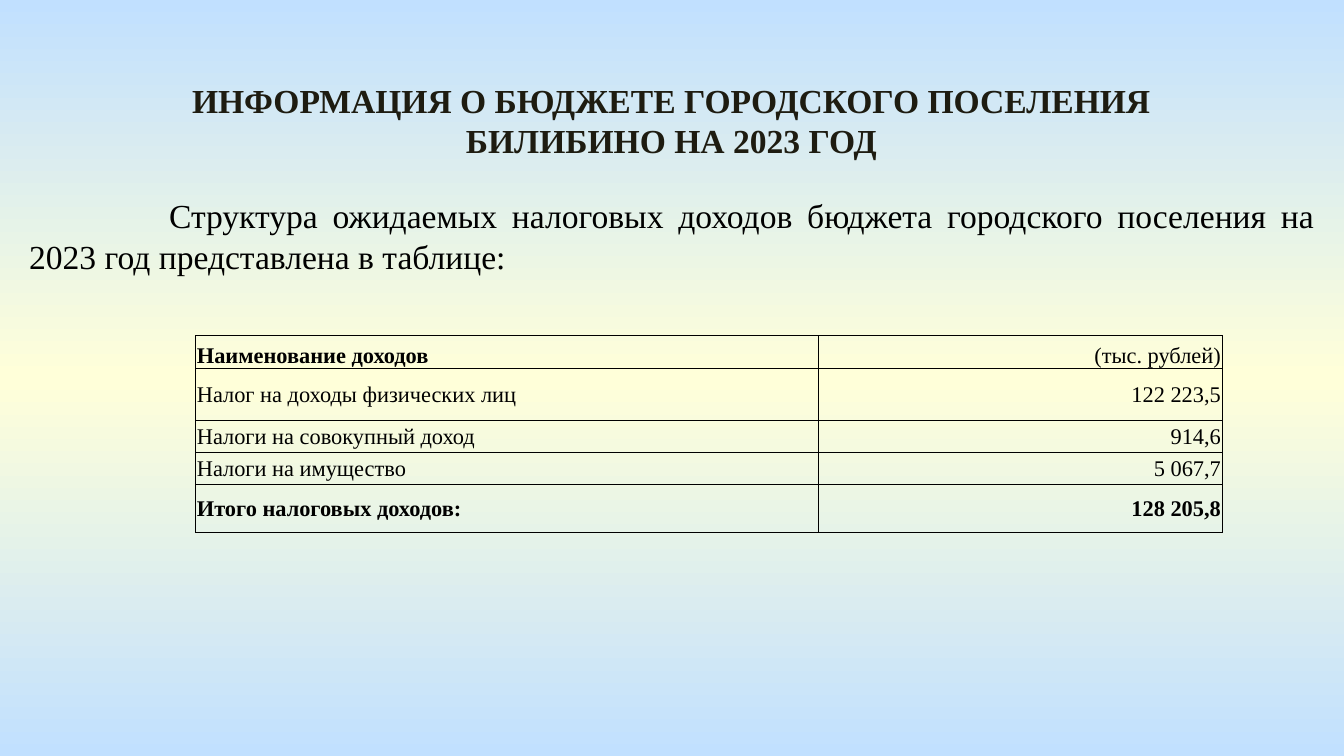
from copy import deepcopy

from lxml.etree import SubElement
from pptx import Presentation
from pptx.dml.color import RGBColor
from pptx.enum.text import MSO_ANCHOR, MSO_AUTO_SIZE, PP_ALIGN
from pptx.oxml.ns import qn
from pptx.util import Pt

THEME = {
    "font": "Times New Roman",
    "title": "1E1C11",
    "text": "000000",
    "border": "000000",
    "edge": "C1E0FF",
    "middle": "FFFFD9",
    "heading_size": 18,
    "table_size": 12,
}


def write(tf, text, size=THEME["heading_size"], color=THEME["text"], bold=False,
          align=PP_ALIGN.JUSTIFY):
    tf.word_wrap = True
    p = tf.paragraphs[0]
    p.alignment = align
    r = p.add_run()
    r.text = text
    r.font.name = THEME["font"]
    r.font.size = Pt(size)
    r.font.bold = bold
    r.font.color.rgb = RGBColor.from_string(color)
    return p


def add_borders(cell):
    tc_pr = cell._tc.get_or_add_tcPr()
    for i, side in enumerate(("a:lnL", "a:lnR", "a:lnT", "a:lnB")):
        ln = SubElement(tc_pr, qn(side), w=str(Pt(0.5)))
        fill = SubElement(ln, qn("a:solidFill"))
        SubElement(fill, qn("a:srgbClr"), val=THEME["border"])
        tc_pr.insert(i, ln)  # borders come before the cell fill


prs = Presentation()
prs.slide_width, prs.slide_height = Pt(720), Pt(405)
s = prs.slides.add_slide(prs.slide_layouts[5])

# Background: blue at both edges, yellow in the middle
bg = s.background.fill
bg.gradient()
bg.gradient_angle = 90
first = bg._fill._gradFill.find(qn("a:gsLst"))[0]
first.addnext(deepcopy(first))
colors = (THEME["edge"], THEME["middle"], THEME["edge"])
for stop, position, color in zip(bg.gradient_stops, (0, 0.5, 1), colors):
    stop.position = position
    stop.color.rgb = RGBColor.from_string(color)

# Title
title = s.shapes.title
title.left, title.top, title.width, title.height = Pt(81.5), Pt(39), Pt(556.5), Pt(51)
tf = title.text_frame
tf.auto_size = MSO_AUTO_SIZE.NONE
tf.vertical_anchor = MSO_ANCHOR.TOP
write(tf, "ИНФОРМАЦИЯ О БЮДЖЕТЕ ГОРОДСКОГО ПОСЕЛЕНИЯ БИЛИБИНО НА 2023 ГОД",
      color=THEME["title"], bold=True, align=PP_ALIGN.CENTER)

# Introduction, with an indented first line
intro = s.shapes.add_textbox(Pt(8.5), Pt(101), Pt(703), Pt(51))
p = write(intro.text_frame, "Структура ожидаемых налоговых доходов бюджета городского "
          "поселения на 2023 год представлена в таблице:")
p._p.get_or_add_pPr().set("indent", str(Pt(75)))

# Tax revenue table
rows = [
    ("Наименование доходов", "(тыс. рублей)", 17.5),
    ("Налог на доходы физических лиц", "122 223,5", 28),
    ("Налоги на совокупный доход", "914,6", 17.2),
    ("Налоги на имущество", "5 067,7", 17.2),
    ("Итого налоговых доходов:", "128\u00a0205,8", 25.8),
]
widths = (333.5, 216.5)
frame = s.shapes.add_table(len(rows), len(widths), Pt(104.8), Pt(179.8),
                           Pt(sum(widths)), Pt(sum(row[-1] for row in rows)))
table = frame.table
table.first_row = table.horz_banding = False
for column, width in zip(table.columns, widths):
    column.width = Pt(width)

last = len(rows) - 1
for i, (name, amount, height) in enumerate(rows):
    table.rows[i].height = Pt(height)
    for j, text in enumerate((name, amount)):
        cell = table.cell(i, j)
        cell.fill.background()
        add_borders(cell)
        cell.margin_left = cell.margin_right = cell.margin_top = Pt(0.7)
        cell.margin_bottom = Pt(0)
        cell.vertical_anchor = MSO_ANCHOR.BOTTOM if i == 0 else MSO_ANCHOR.MIDDLE
        write(cell.text_frame, text, size=THEME["table_size"],
              bold=i == last or (i == 0 and j == 0),
              align=PP_ALIGN.RIGHT if j else PP_ALIGN.JUSTIFY)

prs.save("out.pptx")
